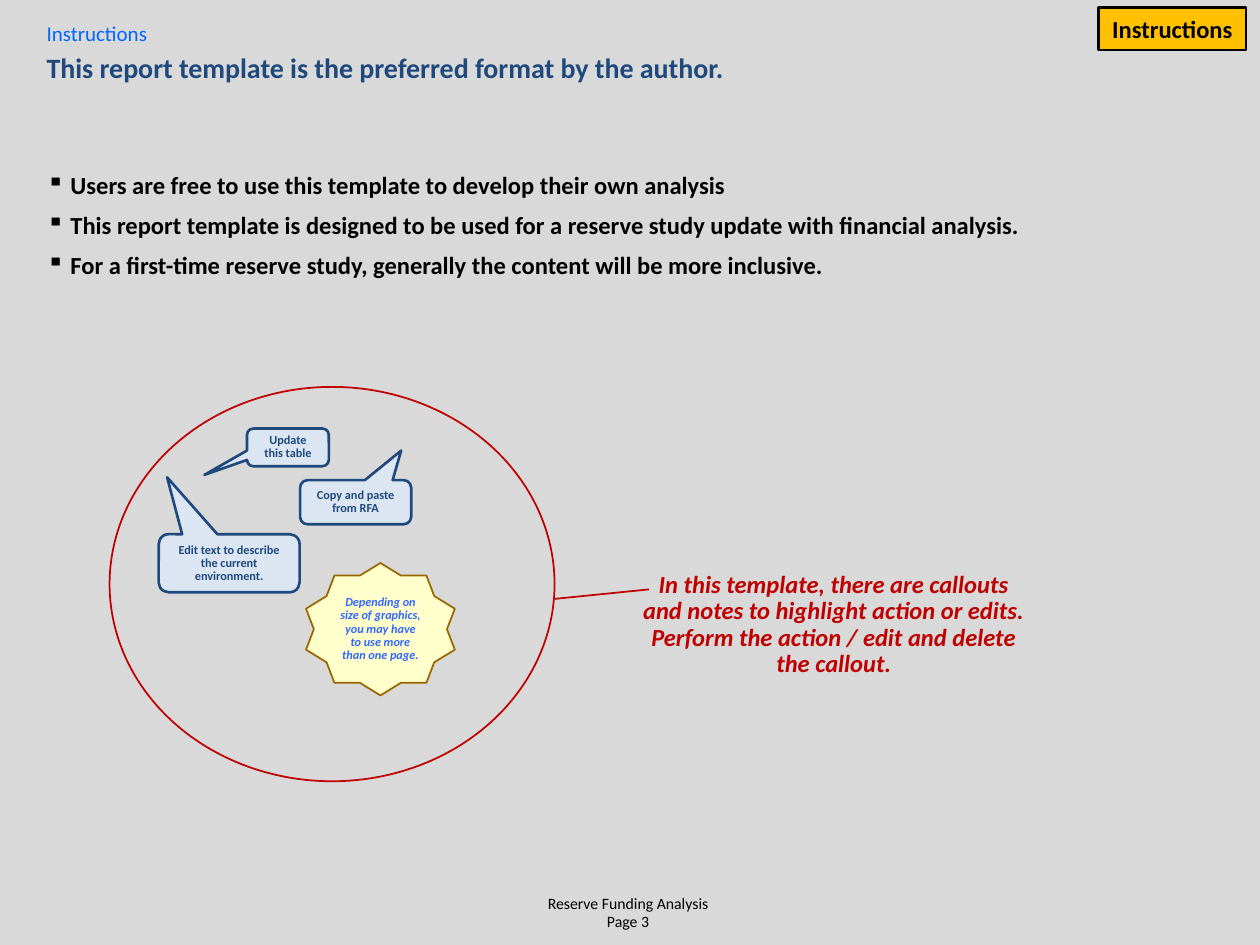
import pptx
import pptx.util
import pptx.dml.color
import pptx.enum.shapes
import pptx.enum.text
import pptx.oxml.ns
import lxml.etree

Cm = pptx.util.Cm
Pt = pptx.util.Pt
RGBColor = pptx.dml.color.RGBColor
SHAPE = pptx.enum.shapes.MSO_SHAPE
ALIGN = pptx.enum.text.PP_ALIGN
ANCHOR = pptx.enum.text.MSO_ANCHOR

BACKGROUND = RGBColor(0xD9, 0xD9, 0xD9)
BLACK = RGBColor(0x00, 0x00, 0x00)
NAVY = RGBColor(0x1F, 0x49, 0x7D)
BRIGHT_BLUE = RGBColor(0x00, 0x66, 0xFF)
NOTE_BLUE = RGBColor(0x33, 0x66, 0xFF)
PALE_BLUE = RGBColor(0xDC, 0xE6, 0xF2)
PALE_YELLOW = RGBColor(0xFF, 0xFF, 0xCC)
BROWN = RGBColor(0x99, 0x66, 0x00)
RED = RGBColor(0xC0, 0x00, 0x00)
AMBER = RGBColor(0xFF, 0xC0, 0x00)

FONT = "Calibri"
MARGIN, CONTENT_WIDTH = 0.94, 23.52

# Content; every box is left, top, width, height in centimetres
SECTION = "Instructions"
TITLE = "This report template is the preferred format by the author."
BULLETS = [
    "Users are free to use this template to develop their own analysis",
    "This report template is designed to be used for a reserve study update with financial analysis.",
    "For a first-time reserve study, generally the content will be more inclusive.",
]
FOOTER = ["Reserve Funding Analysis", "Page 3"]
CALLOUTS = [
    ("Update this table", (4.98, 8.64, 1.65, 0.76), (-1.02, 0.73, 0.17)),
    ("Copy and paste from RFA", (6.05, 9.68, 2.24, 0.89), (0.41, -1.17, 0.17)),
    ("Edit text to describe the current environment.", (3.2, 10.77, 2.84, 1.17), (-0.44, -1.48, 0.17)),
]
STAR_NOTE = "Depending on size of graphics, you may have to use more than one page."
EXPLANATION = (
    "In this template, there are callouts and notes to highlight action or edits. "
    "Perform the action / edit and delete the callout."
)


def write(shape, lines, size, color, bold=False, italic=False, align=ALIGN.CENTER,
          spacing=None, before=None, anchor=ANCHOR.MIDDLE, wrap=True):
    frame = shape.text_frame
    frame.word_wrap = wrap
    frame.vertical_anchor = anchor
    for index, line in enumerate(lines):
        paragraph = frame.paragraphs[0] if index == 0 else frame.add_paragraph()
        paragraph.alignment = align
        if spacing is not None:
            paragraph.line_spacing = spacing
        if before is not None:
            paragraph.space_before = Pt(before)
        run = paragraph.add_run()
        run.text = line
        run.font.name = FONT
        run.font.size = Pt(size)
        run.font.bold = bold
        run.font.italic = italic
        run.font.color.rgb = color


def add_text(slide, box, lines, size, color, **style):
    """Add a left-aligned text box without insets."""
    shape = slide.shapes.add_textbox(*map(Cm, box))
    frame = shape.text_frame
    frame.margin_left = frame.margin_top = frame.margin_right = frame.margin_bottom = 0
    write(shape, lines, size, color, align=ALIGN.LEFT, anchor=ANCHOR.TOP, **style)
    return shape


def add_figure(slide, kind, box, line, width, fill=None, adjustments=()):
    shape = slide.shapes.add_shape(kind, *map(Cm, box))
    shape.shadow.inherit = False
    if fill is None:
        shape.fill.background()
    else:
        shape.fill.solid()
        shape.fill.fore_color.rgb = fill
    shape.line.color.rgb = line
    shape.line.width = Pt(width)
    for index, value in enumerate(adjustments):
        shape.adjustments[index] = value
    return shape


def add_bullet(paragraph, color):
    qn = pptx.oxml.ns.qn
    properties = paragraph._p.get_or_add_pPr()
    properties.set("marL", str(Cm(0.48)))
    properties.set("indent", str(-Cm(0.48)))
    bullet_color = lxml.etree.SubElement(properties, qn("a:buClr"))
    lxml.etree.SubElement(bullet_color, qn("a:srgbClr")).set("val", str(color))
    lxml.etree.SubElement(properties, qn("a:buChar")).set("char", "▪")


def main():
    presentation = pptx.Presentation()
    presentation.slide_width, presentation.slide_height = Cm(25.4), Cm(19.05)
    slide = presentation.slides.add_slide(presentation.slide_layouts[6])
    slide.background.fill.solid()
    slide.background.fill.fore_color.rgb = BACKGROUND

    # Footer
    footer = slide.shapes.add_textbox(*map(Cm, (4.67, 17.91, 15.98, 0.99)))
    write(footer, FOOTER, 9, BLACK, spacing=0.95)

    # Headings and bullet list
    add_text(slide, (MARGIN, 0.41, CONTENT_WIDTH, 0.66), [SECTION], 12, BRIGHT_BLUE, before=6)
    add_text(slide, (MARGIN, 1.07, CONTENT_WIDTH, 2.11), [TITLE], 16, NAVY, bold=True, spacing=0.95)
    body = add_text(slide, (MARGIN, 3.43, CONTENT_WIDTH, 14.33), BULLETS, 14, BLACK, bold=True, before=6)
    for paragraph in body.text_frame.paragraphs:
        add_bullet(paragraph, BLACK)

    # Sample callouts
    for text, box, adjustments in CALLOUTS:
        callout = add_figure(slide, SHAPE.ROUNDED_RECTANGULAR_CALLOUT, box, NAVY, 1.5, PALE_BLUE, adjustments)
        write(callout, [text], 7, NAVY, bold=True, spacing=0.9)

    # Sample star note
    star = add_figure(slide, SHAPE.STAR_10_POINT, (6.17, 11.35, 3, 2.67), BROWN, 1, PALE_YELLOW)
    write(star, [STAR_NOTE], 7, NOTE_BLUE, bold=True, italic=True, spacing=0.9)

    # Circle around the samples and its explanation
    add_figure(slide, SHAPE.OVAL, (2.21, 7.8, 8.97, 7.95), RED, 1)
    explanation = add_figure(slide, SHAPE.LINE_CALLOUT_1_NO_BORDER, (12.67, 11.4, 8.28, 2.41),
                             RED, 1, adjustments=(0.2, 0.05, 0.28, -0.18))
    write(explanation, [EXPLANATION], 14, RED, bold=True, italic=True, spacing=0.9)

    # Corner badge
    badge = add_figure(slide, SHAPE.RECTANGLE, (22.15, 0.15, 2.97, 0.86), BLACK, 1.5, AMBER)
    write(badge, [SECTION], 14, BLACK, bold=True, wrap=False)

    presentation.save("out.pptx")


if __name__ == "__main__":
    main()
